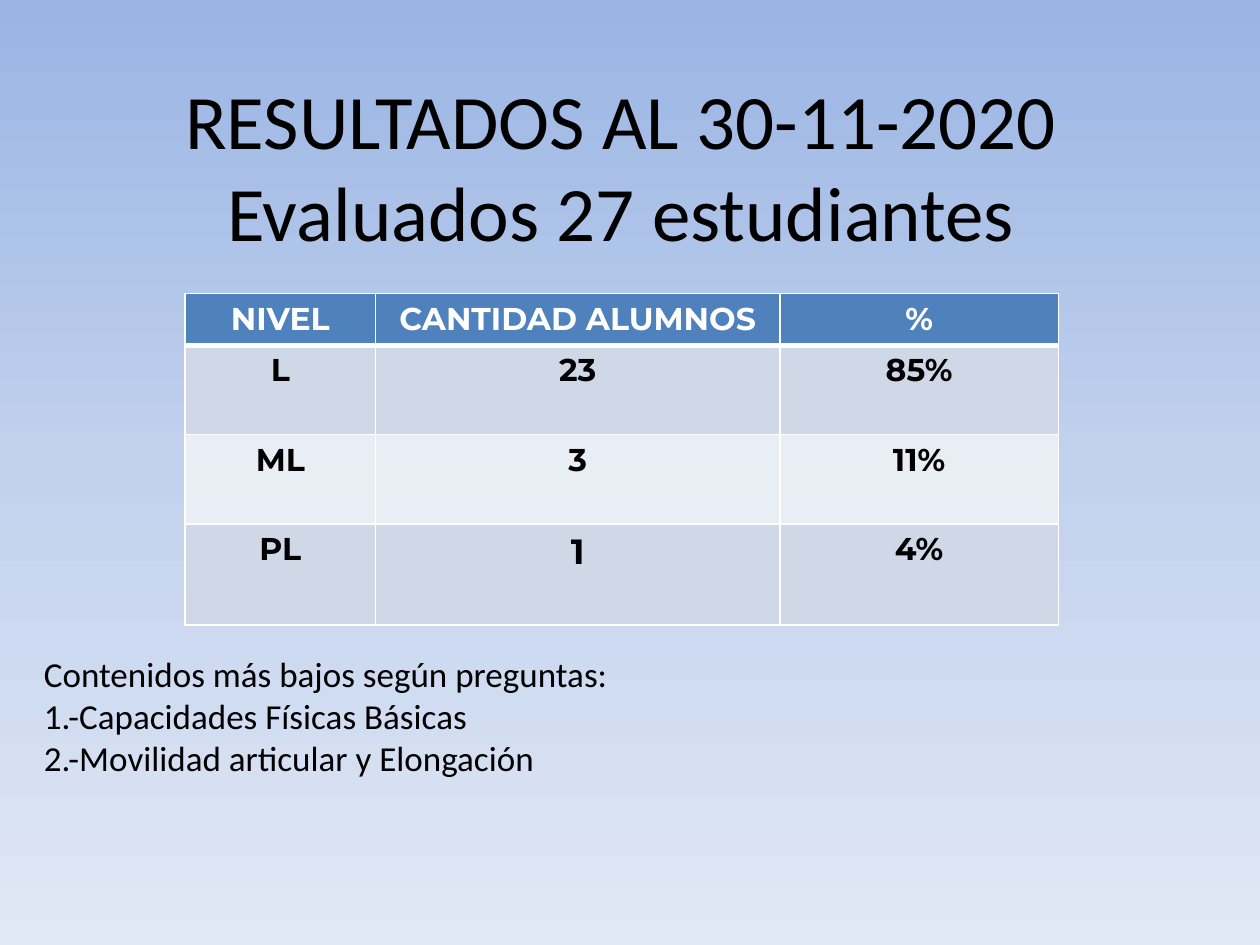
from copy import deepcopy
from dataclasses import dataclass

from pptx import Presentation, util as u
from pptx.dml.color import RGBColor
from pptx.enum import text
from pptx.oxml import parse_xml
from pptx.oxml.ns import nsdecls, qn

UNIT = u.Inches(0.1)  # the slide is a grid of 100 columns by 75 rows


@dataclass(frozen=True)
class Theme:
    body_font: str = "Calibri"
    table_font: str = "Montserrat"
    title_size: float = 44
    note_size: float = 20
    cell_size: float = 18
    ink: str = "000000"
    white: str = "FFFFFF"
    header: str = "4F81BD"
    bands: tuple = ("D0D8E8", "E9EDF4")
    background: tuple = ((0, "9AB5E4"), (0.5, "C2D1ED"), (1, "E1E8F5"))
    line: float = 1
    header_line: float = 3


@dataclass(frozen=True)
class Box:
    """Left, top, width and height in grid units."""
    x: float
    y: float
    w: float
    h: float

    def emu(self) -> list[int]:
        return [grid(v) for v in (self.x, self.y, self.w, self.h)]


@dataclass(frozen=True)
class Result:
    level: str
    count: str
    share: str
    height: float
    count_size: float = 18


THEME = Theme()
COLUMNS = (("NIVEL", 15.1), ("CANTIDAD ALUMNOS", 32.1), ("%", 22.1))
HEADER_HEIGHT = 4.1
RESULTS = (
    Result("L", "23", "85%", 7.1),
    Result("ML", "3", "11%", 7.1),
    Result("PL", "1", "4%", 8, count_size=20),
)
NOTES = (
    "Contenidos más bajos según preguntas:",
    "1.-Capacidades Físicas Básicas",
    "2.-Movilidad articular y Elongación",
)


def grid(n: float) -> int:
    return round(n * UNIT)


def format_text(tf, font: str, size: float, color: str, align, bold: bool = False) -> None:
    for p in tf.paragraphs:
        p.alignment = align
        for r in p.runs:
            r.font.name = font
            r.font.size = u.Pt(size)
            r.font.bold = bold
            r.font.color.rgb = RGBColor.from_string(color)


def paint_background(s) -> None:
    fill = s.background.fill
    fill.gradient()
    fill.gradient_angle = 270
    stops = s._element.find(".//" + qn("a:gsLst"))
    stops.insert(0, deepcopy(stops[0]))
    for stop, (position, color) in zip(fill.gradient_stops, THEME.background):
        stop.position = position
        stop.color.rgb = RGBColor.from_string(color)


def add_text(s, box: Box, content: str, size: float, align, anchor) -> None:
    tf = s.shapes.add_textbox(*box.emu()).text_frame
    tf.word_wrap = True
    tf.vertical_anchor = anchor
    tf.text = content
    format_text(tf, THEME.body_font, size, THEME.ink, align)


def set_borders(cell, top: float, bottom: float) -> None:
    widths = {"L": THEME.line, "R": THEME.line, "T": top, "B": bottom}
    tc_pr = cell._tc.get_or_add_tcPr()
    for i, (side, width) in enumerate(widths.items()):
        tc_pr.insert(i, parse_xml(
            f'<a:ln{side} {nsdecls("a")} w="{u.Pt(width)}"><a:solidFill>'
            f'<a:srgbClr val="{THEME.white}"/></a:solidFill></a:ln{side}>'))


def fill_cell(cell, content: str, size: float, color: str, fill: str,
              top: float, bottom: float) -> None:
    cell.text = content
    cell.fill.solid()
    cell.fill.fore_color.rgb = RGBColor.from_string(fill)
    format_text(cell.text_frame, THEME.table_font, size, color,
                text.PP_ALIGN.CENTER, bold=True)
    set_borders(cell, top, bottom)


def add_results(s, x: float, y: float) -> None:
    heights = [HEADER_HEIGHT] + [result.height for result in RESULTS]
    box = Box(x, y, sum(width for _, width in COLUMNS), sum(heights))
    table = s.shapes.add_table(len(heights), len(COLUMNS), *box.emu()).table
    for row, height in zip(table.rows, heights):
        row.height = grid(height)
    for i, (label, width) in enumerate(COLUMNS):
        table.columns[i].width = grid(width)
        fill_cell(table.cell(0, i), label, THEME.cell_size, THEME.white,
                  THEME.header, THEME.line, THEME.header_line)
    for i, result in enumerate(RESULTS):
        top = THEME.line if i else THEME.header_line
        values = ((result.level, THEME.cell_size),
                  (result.count, result.count_size),
                  (result.share, THEME.cell_size))
        for j, (value, size) in enumerate(values):
            fill_cell(table.cell(i + 1, j), value, size, THEME.ink,
                      THEME.bands[i % 2], top, THEME.line)


def main() -> None:
    prs = Presentation()
    prs.slide_width, prs.slide_height = 100 * UNIT, 75 * UNIT
    s = prs.slides.add_slide(prs.slide_layouts[6])
    paint_background(s)
    add_text(s, Box(4.3, 4.4, 90, 17.3),
             "RESULTADOS AL 30-11-2020\vEvaluados 27 estudiantes",
             THEME.title_size, text.PP_ALIGN.CENTER, text.MSO_ANCHOR.MIDDLE)
    add_results(s, 14.7, 23.3)
    add_text(s, Box(2.5, 51.3, 93.7, 11.1), "\n".join(NOTES),
             THEME.note_size, text.PP_ALIGN.LEFT, text.MSO_ANCHOR.TOP)
    prs.save("out.pptx")


if __name__ == "__main__":
    main()
